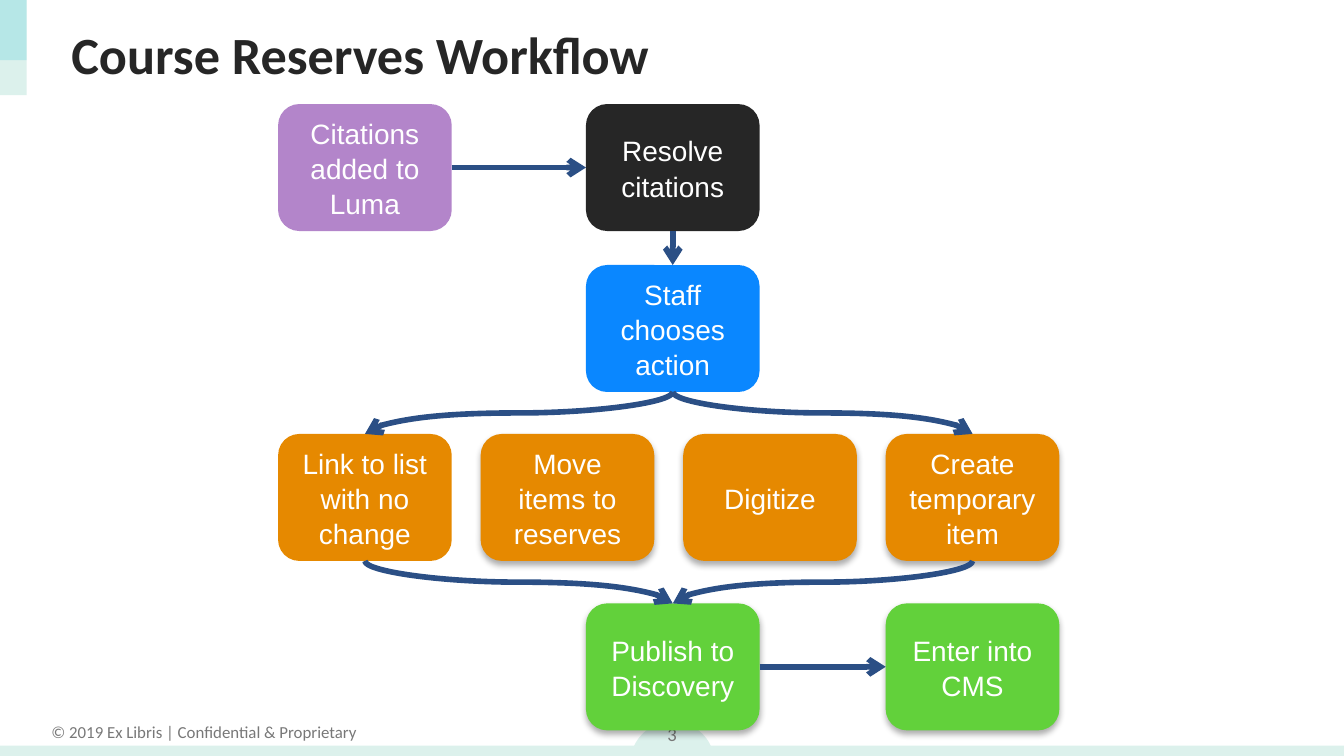
from lxml import etree
from pptx import Presentation
from pptx.dml.color import RGBColor
from pptx.enum.shapes import MSO_CONNECTOR, MSO_SHAPE
from pptx.enum.text import MSO_ANCHOR, MSO_AUTO_SIZE, PP_ALIGN
from pptx.oxml.ns import qn
from pptx.util import Pt

STRAIGHT, CURVE = MSO_CONNECTOR.STRAIGHT, MSO_CONNECTOR.CURVE
ROUNDED, RECTANGLE, OVAL = MSO_SHAPE.ROUNDED_RECTANGLE, MSO_SHAPE.RECTANGLE, MSO_SHAPE.OVAL
LEFT, CENTER = PP_ALIGN.LEFT, PP_ALIGN.CENTER
TOP, MIDDLE = MSO_ANCHOR.TOP, MSO_ANCHOR.MIDDLE
NO_AUTOFIT = MSO_AUTO_SIZE.NONE

WHITE = RGBColor(0xFF, 0xFF, 0xFF)
BLACK = RGBColor(0, 0, 0)
CHARCOAL = RGBColor(0x26, 0x26, 0x26)
GRAY = RGBColor(0x78, 0x78, 0x78)
MINT = RGBColor(0xDC, 0xF1, 0xEC)
TEAL = RGBColor(0x50, 0xCF, 0xDA)
PURPLE = RGBColor(0xB3, 0x85, 0xCA)
BLUE = RGBColor(0x0A, 0x87, 0xFF)
ORANGE = RGBColor(0xE6, 0x89, 0x00)
GREEN = RGBColor(0x62, 0xD1, 0x3B)
NAVY = RGBColor(0x2B, 0x4F, 0x85)

TITLE = "Course Reserves Workflow"
COPYRIGHT = "© 2019 Ex Libris | Confidential & Proprietary"
PAGE_NUMBER = "3"

DECORATIONS = [
    (OVAL, (337.5, 386.5, 45.5, 45.5), MINT, 100),
    (RECTANGLE, (0, 399.5, 720, 8), MINT, 100),
    (RECTANGLE, (0, 0, 14.25, 51), MINT, 100),
    (RECTANGLE, (0, 0, 14.25, 32.25), TEAL, 27),
]

# column, row, fill, has shadow
STEPS = {
    "Citations added to Luma": (0, 0, PURPLE, False),
    "Resolve citations": (1.52, 0, CHARCOAL, False),
    "Staff chooses action": (1.52, 1, BLUE, False),
    "Link to list with no change": (0, 2, ORANGE, False),
    "Move items to reserves": (1, 2, ORANGE, True),
    "Digitize": (2, 2, ORANGE, True),
    "Create temporary item": (3, 2, ORANGE, True),
    "Publish to Discovery": (1.52, 3, GREEN, True),
    "Enter into CMS": (3, 3, GREEN, True),
}

SIDE_TOP, SIDE_LEFT, SIDE_BOTTOM, SIDE_RIGHT = range(4)
ACROSS = (SIDE_RIGHT, SIDE_LEFT)
DOWN = (SIDE_BOTTOM, SIDE_TOP)
FLOWS = [
    ("Citations added to Luma", "Resolve citations", STRAIGHT, ACROSS),
    ("Resolve citations", "Staff chooses action", STRAIGHT, DOWN),
    ("Staff chooses action", "Link to list with no change", CURVE, DOWN),
    ("Staff chooses action", "Create temporary item", CURVE, DOWN),
    ("Link to list with no change", "Publish to Discovery", CURVE, DOWN),
    ("Create temporary item", "Publish to Discovery", CURVE, DOWN),
    ("Publish to Discovery", "Enter into CMS", STRAIGHT, ACROSS),
]

STEP_W, STEP_H = 93, 68
FIRST_COLUMN, COLUMN_PITCH = 149, 108.5
ROW_TOPS = (55.75, 142, 232.5, 323.25)

TITLE_FONT = {"name": "Calibri", "size": Pt(28), "bold": True}
FOOTER_FONT = {"name": "Calibri", "size": Pt(9)}
NUMBER_FONT = {"name": "Calibri", "size": Pt(10)}
STEP_FONT = {"name": "Arial", "size": Pt(15)}
STEP_FRAME = {"margin_left": Pt(5), "margin_right": Pt(5),
              "margin_top": Pt(3), "margin_bottom": Pt(3)}


def apply(target, values):
    for name, value in values.items():
        setattr(target, name, value)


def write(shape, text, font, color, align=CENTER, frame=None, spacing=1.0):
    body = shape.text_frame
    apply(body, {"word_wrap": True, "auto_size": NO_AUTOFIT,
                 "vertical_anchor": MIDDLE, **(frame or {})})
    body.text = text
    paragraph = body.paragraphs[0]
    apply(paragraph, {"alignment": align, "line_spacing": spacing})
    apply(paragraph.font, font)
    paragraph.font.color.rgb = color


def add_block(slide, kind, box, fill):
    block = slide.shapes.add_shape(kind, *map(Pt, box))
    block.shadow.inherit = False
    block.fill.solid()
    block.fill.fore_color.rgb = fill
    block.line.fill.background()
    return block


def add_alpha(color_element, percent):
    etree.SubElement(color_element, qn("a:alpha"), val=str(percent * 1000))


def cast_shadow(block):
    effects = block.element.spPr.find(qn("a:effectLst"))
    shadow = etree.SubElement(effects, qn("a:outerShdw"), blurRad=str(Pt(3.5)),
                              dist=str(Pt(2.2)), dir="5400000", rotWithShape="0")
    add_alpha(etree.SubElement(shadow, qn("a:srgbClr"), val=str(BLACK)), 32)


def turn_downward(flow, source, target):
    start_x, end_x = (step.left + step.width // 2 for step in (source, target))
    start_y, end_y = source.top + source.height, target.top
    run, drop = abs(end_x - start_x), end_y - start_y
    apply(flow, {"left": (start_x + end_x - drop) // 2,
                 "top": (start_y + end_y - run) // 2,
                 "width": drop, "height": run})
    rightward = end_x > start_x
    placement = flow.element.spPr.find(qn("a:xfrm"))
    placement.set("rot", "16200000" if rightward else "5400000")
    placement.set("flipH", "1" if rightward else "0")
    placement.set("flipV", "0")


def add_flow(slide, source, target, kind, sides):
    flow = slide.shapes.add_connector(kind, 0, 0, 0, 0)
    flow.begin_connect(source, sides[0])
    flow.end_connect(target, sides[1])
    if kind == CURVE:
        turn_downward(flow, source, target)
    flow.line.color.rgb = NAVY
    flow.line.width = Pt(3)
    etree.SubElement(flow.line._get_or_add_ln(), qn("a:tailEnd"), type="arrow")
    etree.SubElement(flow.element.spPr, qn("a:effectLst"))


def main():
    deck = Presentation()
    apply(deck, {"slide_width": Pt(720), "slide_height": Pt(405)})
    slide = deck.slides.add_slide(deck.slide_layouts[5])

    title = slide.shapes.title
    apply(title, {"left": Pt(31), "top": Pt(5.75), "width": Pt(663), "height": Pt(45.5)})
    write(title, TITLE, TITLE_FONT, CHARCOAL, LEFT)

    for kind, box, fill, opacity in DECORATIONS:
        block = add_block(slide, kind, box, fill)
        if opacity < 100:
            add_alpha(block.element.spPr.find(".//" + qn("a:srgbClr")), opacity)

    footer = slide.shapes.add_textbox(Pt(19.5), Pt(383), Pt(179.5), Pt(18))
    write(footer, COPYRIGHT, FOOTER_FONT, GRAY,
          frame={"word_wrap": False, "vertical_anchor": TOP})
    number = slide.shapes.add_textbox(Pt(338.5), Pt(379), Pt(43), Pt(29))
    write(number, PAGE_NUMBER, NUMBER_FONT, GRAY)

    steps = {}
    for label, (column, row, fill, shadowed) in STEPS.items():
        box = (FIRST_COLUMN + column * COLUMN_PITCH, ROW_TOPS[row], STEP_W, STEP_H)
        steps[label] = add_block(slide, ROUNDED, box, fill)
        write(steps[label], label, STEP_FONT, WHITE, frame=STEP_FRAME, spacing=1.05)
        if shadowed:
            cast_shadow(steps[label])

    for source, target, kind, sides in FLOWS:
        add_flow(slide, steps[source], steps[target], kind, sides)

    deck.save("out.pptx")


if __name__ == "__main__":
    main()
